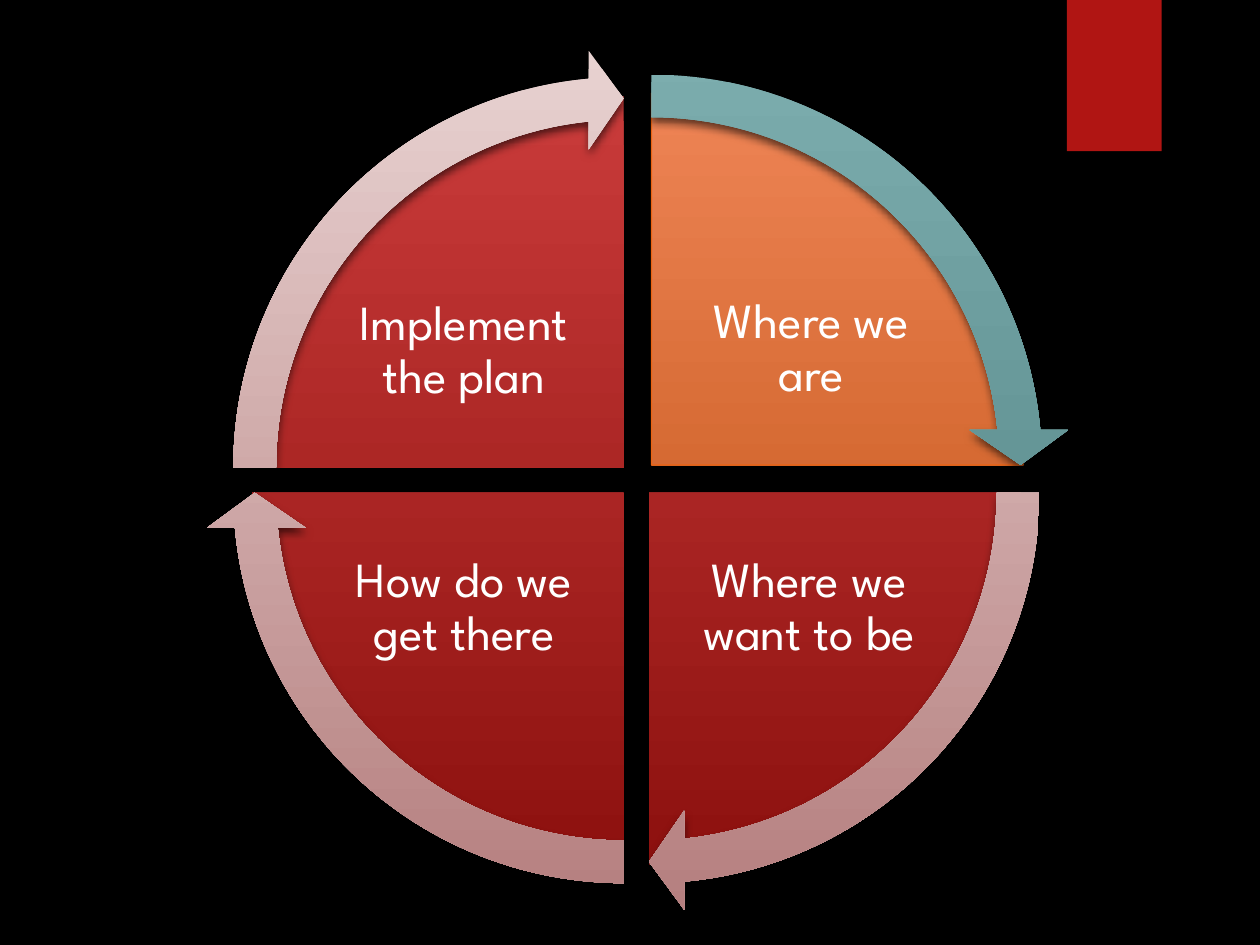
import pptx
import pptx.dml.color
import pptx.enum.shapes
import pptx.enum.text
import pptx.oxml
import pptx.oxml.ns
import pptx.util
from pptx.util import Cm

MSO_SHAPE = pptx.enum.shapes.MSO_SHAPE
COLORS = {
    "background": "000000", "shadow": "000000", "text": "FFFFFF", "tab": "B01513",
    "outline": "EA6312",
    "orange": ("EE8455", "BC4F0E"), "red": ("C93B3A", "8D110F"),
    "teal": ("7CADAE", "4C7D7E"), "pink": ("E8D2D1", "B57F7F"),
}
# opacity %, blur pt, distance pt
SOFT_SHADOW, DEEP_SHADOW = (45, 3, 2), (60, 5, 3)
TEXT_FORMAT = {"name": "League Spartan", "size": pptx.util.Pt(28)}
PARAGRAPH_FORMAT = {
    "alignment": pptx.enum.text.PP_ALIGN.CENTER,
    "line_spacing": 0.9,
    "space_after": pptx.util.Pt(9.8),
}
FRAME_FORMAT = {
    "word_wrap": True,
    "vertical_anchor": pptx.enum.text.MSO_ANCHOR.MIDDLE,
    **{f"margin_{side}": Cm(0.1) for side in ("left", "top", "right", "bottom")},
}
# label, wheel offset, label column and row, pie colour, arrow colour, pie shadow
QUADRANTS = [
    ("Where we are", (0.56, 0), (8.89, 4.04), "orange", "teal", SOFT_SHADOW),
    ("Where we want to be", (0.51, 0.56), (8.89, 8.71), "red", "pink", DEEP_SHADOW),
    ("How do we get there", (0, 0.56), (2.44, 8.71), "red", "pink", DEEP_SHADOW),
    ("Implement the plan", (0, 0.05), (2.44, 4.04), "red", "pink", DEEP_SHADOW),
]
# Angles are in units of 100000 / 60000 degrees: a full turn is 216
FULL_TURN, QUARTER = 216, 54
ARROW_SIZE, PIE_INSET = 16.87, 0.94
ARROW_WIDTH, HEAD_ANGLE, HEAD_WIDTH = 0.051, 3.275, 0.059


def rgb(name):
    return pptx.dml.color.RGBColor.from_string(COLORS[name])


def apply(target, values):
    for name, value in values.items():
        setattr(target, name, value)


def add_shadow(sp, opacity, blur, distance):
    sp.shadow.inherit = False
    effects = sp._element.spPr.find(pptx.oxml.ns.qn("a:effectLst"))
    effects.append(pptx.oxml.parse_xml(
        f'<a:outerShdw {pptx.oxml.ns.nsdecls("a")} blurRad="{blur * 12700}" '
        f'dist="{distance * 12700}" dir="5400000" rotWithShape="0">'
        f'<a:srgbClr val="{COLORS["shadow"]}"><a:alpha val="{opacity * 1000}"/>'
        f'</a:srgbClr></a:outerShdw>'))


def add_wheel_part(shapes, kind, left, top, size, adjustments, color, shadow):
    sp = shapes.add_shape(kind, Cm(left), Cm(top), Cm(size), Cm(size))
    for i, value in enumerate(adjustments):
        sp.adjustments[i] = value
    sp.fill.gradient()
    sp.fill.gradient_angle = 270
    for stop, value in zip(sp.fill.gradient_stops, COLORS[color]):
        stop.color.rgb = pptx.dml.color.RGBColor.from_string(value)
    sp.line.fill.background()
    add_shadow(sp, *shadow)
    return sp


def add_label(shapes, text, left, top, width, height):
    tf = shapes.add_textbox(Cm(left), Cm(top), Cm(width), Cm(height)).text_frame
    apply(tf, FRAME_FORMAT)
    p = tf.paragraphs[0]
    apply(p, PARAGRAPH_FORMAT)
    r = p.add_run()
    r.text = text
    apply(r.font, TEXT_FORMAT)
    r.font.color.rgb = rgb("text")


def add_cycle(s, left, top):
    """Four labelled pie quarters, with a curved arrow over each."""
    shapes = s.shapes.add_group_shape().shapes
    for i, (text, (dx, dy), (column, row), color, _, shadow) in enumerate(QUADRANTS):
        x, y = left + dx, top + dy
        end = i * QUARTER
        pie = add_wheel_part(
            shapes, MSO_SHAPE.PIE, x + PIE_INSET, y + PIE_INSET,
            ARROW_SIZE - 2 * PIE_INSET, ((end - QUARTER) % FULL_TURN, end), color, shadow)
        if color == "orange":
            pie.line.color.rgb = rgb("outline")
            pie.line.width = pptx.util.Pt(0.75)
        add_label(shapes, text, x + column, y + row, 5.54, 4.11)
    for i, (_, (dx, dy), _, _, color, _) in enumerate(QUADRANTS):
        end = i * QUARTER
        adjustments = (ARROW_WIDTH, HEAD_ANGLE, (end - HEAD_ANGLE) % FULL_TURN,
                       (end - QUARTER) % FULL_TURN, HEAD_WIDTH)
        add_wheel_part(shapes, MSO_SHAPE.CIRCULAR_ARROW, left + dx, top + dy,
                       ARROW_SIZE, adjustments, color, DEEP_SHADOW)


def add_corner_tab(s, left, top, width, height):
    sp = s.shapes.add_shape(MSO_SHAPE.RECTANGLE, Cm(left), Cm(top), Cm(width), Cm(height))
    sp.fill.solid()
    sp.fill.fore_color.rgb = rgb("tab")
    sp.line.fill.background()
    add_shadow(sp, *SOFT_SHADOW)


def main():
    prs = pptx.Presentation()
    prs.slide_width, prs.slide_height = Cm(25.4), Cm(19.05)
    s = prs.slides.add_slide(prs.slide_layouts[6])
    s.background.fill.solid()
    s.background.fill.fore_color.rgb = rgb("background")
    add_corner_tab(s, 21.51, 0, 1.91, 3.05)
    add_cycle(s, 4.14, 0.94)
    prs.save("out.pptx")


if __name__ == "__main__":
    main()
